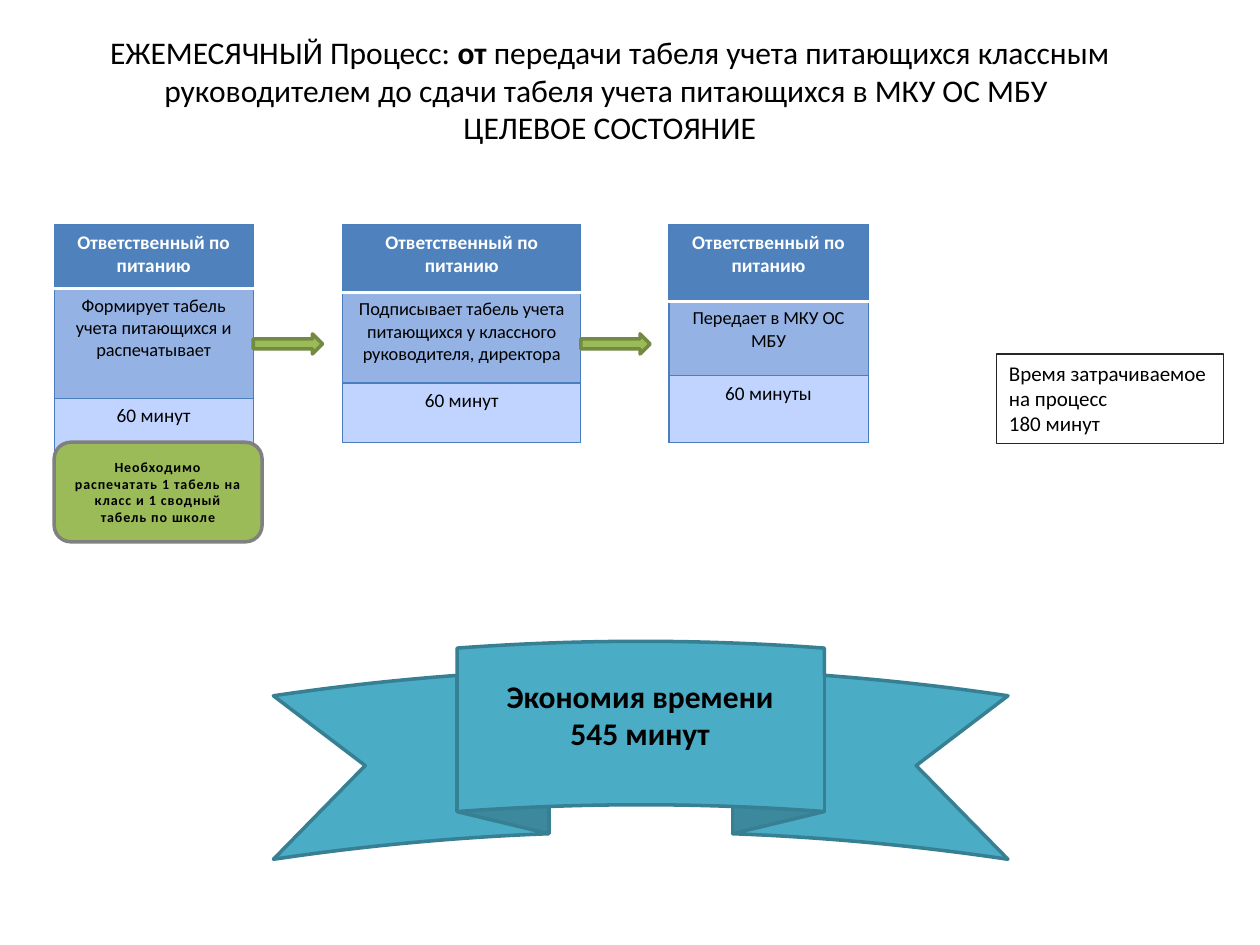
from lxml.etree import SubElement
from pptx import Presentation
from pptx.dml.color import RGBColor as RGB
from pptx.enum.shapes import MSO_SHAPE as SHAPE
from pptx.enum.text import MSO_ANCHOR as ANCHOR, MSO_AUTO_SIZE as AUTOSIZE, PP_ALIGN as ALIGN
from pptx.oxml.ns import qn
from pptx.util import Inches, Pt

THEME = {
    "font": "Calibri",
    "title": 18, "role": 11, "step": 10.5, "time": 11, "note": 8, "total": 12,
    "black": "000000", "white": "FFFFFF", "frame": "262626", "grey": "808080",
    "blue": "4F81BD", "mid_blue": "94B2E3", "pale_blue": "C0D4FF", "border": "4B7EBC",
    "green": "9BBB59", "dark_green": "738A42", "teal": "4BACC6", "dark_teal": "377F92",
}

deck = Presentation()
deck.slide_width, deck.slide_height = Inches(10), Inches(7.5)
slide = deck.slides.add_slide(deck.slide_layouts[5])
COL, ROW = deck.slide_width / 100, deck.slide_height / 75  # grid of 100 x 75


def write(frame, paragraphs, size, color="black", bold=False, align=ALIGN.CENTER, anchor=ANCHOR.TOP):
    """Fill a text frame; each paragraph is a list of (text, bold) runs or a string."""
    frame.word_wrap = True
    frame.vertical_anchor = anchor
    for i, content in enumerate(paragraphs):
        paragraph = frame.paragraphs[0] if i == 0 else frame.add_paragraph()
        paragraph.alignment = align
        for text, heavy in [(content, bold)] if isinstance(content, str) else content:
            run = paragraph.add_run()
            run.text = text
            look = {"name": THEME["font"], "size": Pt(THEME[size]), "bold": heavy}
            for key, value in look.items():
                setattr(run.font, key, value)
            run.font.color.rgb = RGB.from_string(THEME[color])


def draw(kind, x, y, w, h, fill, line, weight=2):
    """Add a preset shape at grid columns and rows."""
    shape = slide.shapes.add_shape(kind, int(x * COL), int(y * ROW), int(w * COL), int(h * ROW))
    shape.shadow.inherit = False
    if fill:
        shape.fill.solid()
        shape.fill.fore_color.rgb = RGB.from_string(THEME[fill])
    else:
        shape.fill.background()
    shape.line.color.rgb = RGB.from_string(THEME[line])
    shape.line.width = Pt(weight)
    return shape


# Title
title = slide.shapes.title
box = {"left": 5.1 * COL, "top": 2.1 * ROW, "width": 86.6 * COL, "height": 10.1 * ROW}
for side, length in box.items():
    setattr(title, side, int(length))
write(title.text_frame, [
    [("ЕЖЕМЕСЯЧНЫЙ Процесс: ", False), ("от", True),
     (" передачи табеля учета питающихся классным руководителем до сдачи табеля "
      "учета питающихся в МКУ ОС МБУ ", False)],
    "ЦЕЛЕВОЕ СОСТОЯНИЕ",
], "title")
title.text_frame.auto_size = AUTOSIZE.NONE

# Savings ribbon
draw(SHAPE.CURVED_UP_RIBBON, 21.7, 50.9, 58.3, 17.3, "teal", "dark_teal")
savings = slide.shapes.add_textbox(int(37.4 * COL), int(53.2 * ROW), int(26.8 * COL), int(7.1 * ROW))
write(savings.text_frame, ["Экономия времени 545 минут"], "title", bold=True)

# Process steps: left, width, row heights, task, time
STEPS_TOP = 17.8
ROLE = "Ответственный по питанию"
steps = [
    (4.3, 15.8, (5.1, 8.7, 4.4), "Формирует табель учета питающихся и распечатывает", "60 минут"),
    (27.2, 18.9, (5.4, 7.2, 4.7),
     "Подписывает табель учета питающихся у классного руководителя, директора", "60 минут"),
    (53.1, 15.8, (6.1, 5.9, 5.3), "Передает в МКУ ОС МБУ", "60 минуты"),
]
row_looks = [("role", "white", True, "blue"), ("step", "black", False, "mid_blue"),
             ("time", "black", False, "pale_blue")]
for left, width, heights, task, time in steps:
    card = slide.shapes.add_table(3, 1, int(left * COL), int(STEPS_TOP * ROW),
                                  int(width * COL), int(sum(heights) * ROW)).table
    for r, (text, (size, color, bold, fill)) in enumerate(zip((ROLE, task, time), row_looks)):
        card.rows[r].height = int(heights[r] * ROW)
        cell = card.cell(r, 0)
        write(cell.text_frame, [text], size, color, bold)
        # Borders: a white rule parts the heading from the task
        white_side = {0: "lnB", 1: "lnT"}.get(r)
        for side in ("lnL", "lnR", "lnT", "lnB"):
            is_rule = side == white_side
            edge = SubElement(cell._tc.get_or_add_tcPr(), qn(f"a:{side}"),
                              w=str(Pt(2 if is_rule else 0.75)))
            paint = SubElement(edge, qn("a:solidFill"))
            SubElement(paint, qn("a:srgbClr"), val=THEME["white" if is_rule else "border"])
        cell.fill.solid()
        cell.fill.fore_color.rgb = RGB.from_string(THEME[fill])

# Arrows from each step to the next
for left, width, *_ in steps[:-1]:
    draw(SHAPE.RIGHT_ARROW, left + width, 26.5, 5.5, 1.6, "green", "dark_green")

# Note under the first step
note = draw(SHAPE.ROUNDED_RECTANGLE, 4.3, 35.1, 16.5, 7.9, "green", "grey")
write(note.text_frame, ["Необходимо распечатать 1 табель на класс и 1 сводный табель по школе"],
      "note", bold=True, anchor=ANCHOR.MIDDLE)
note.text_frame.paragraphs[0].runs[0].font._element.set("spc", "50")

# Total time
total = draw(SHAPE.RECTANGLE, 79.1, 28.1, 18, 7.1, None, "frame", 0.75)
write(total.text_frame, ["Время затрачиваемое на процесс", "180 минут"], "total", align=ALIGN.LEFT)

deck.save("out.pptx")
